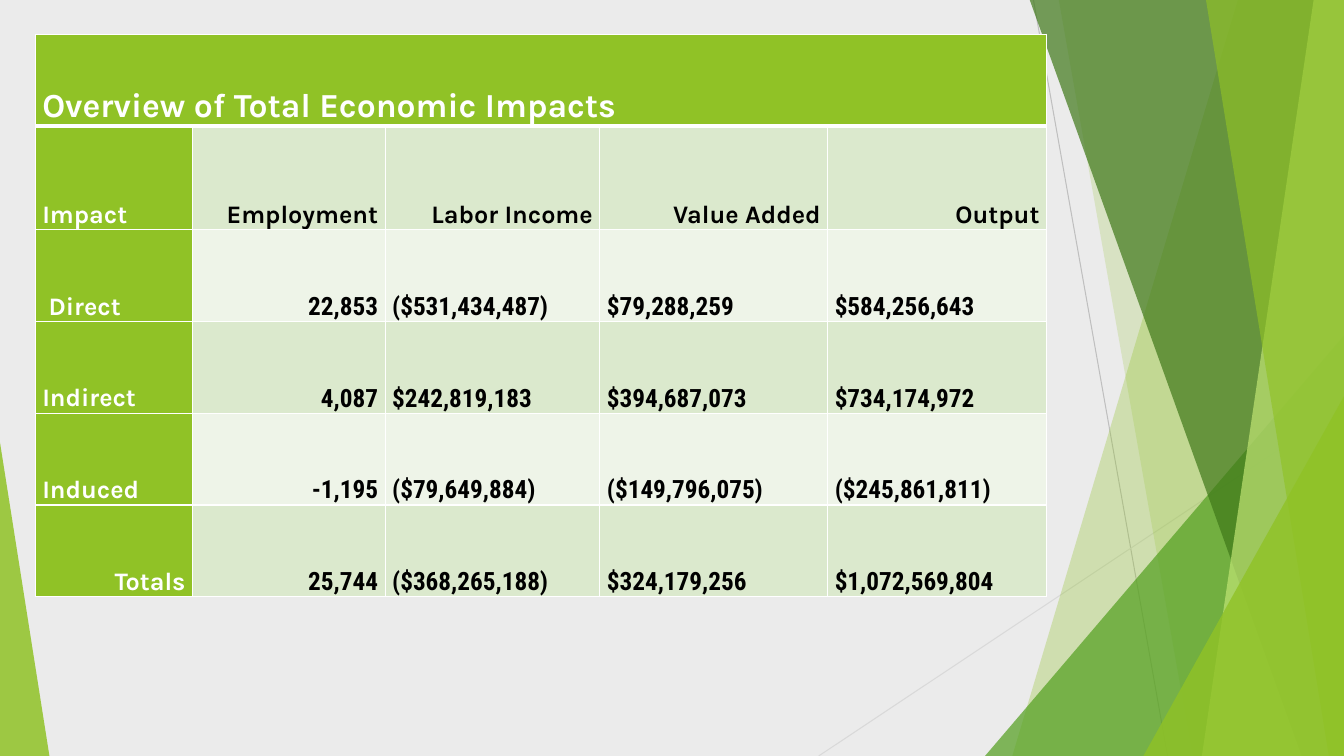
from lxml import etree
from pptx import Presentation
from pptx.dml.color import RGBColor
from pptx.enum.shapes import MSO_CONNECTOR, MSO_SHAPE
from pptx.enum.text import MSO_ANCHOR, PP_ALIGN
from pptx.oxml.ns import qn
from pptx.util import Inches, Pt

LEFT, RIGHT = PP_ALIGN.LEFT, PP_ALIGN.RIGHT
BOTTOM = MSO_ANCHOR.BOTTOM
STRAIGHT = MSO_CONNECTOR.STRAIGHT
TRIANGLE = MSO_SHAPE.ISOSCELES_TRIANGLE

COLORS = {
    "back": "EBEBEB", "lime": "90C226", "green": "54A021", "dark": "3F7819",
    "pale": "C0E474", "gray": "BFBFBF", "mist": "D9D9D9", "white": "FFFFFF",
    "black": "000000", "band": "DBE9CD", "light": "EEF4E8",
}
HEAD, BODY = "Karla", "Roboto Condensed"

TITLE = "Overview of Total Economic Impacts"
ROWS = [
    ["Impact", "Employment", "Labor Income", "Value Added", "Output"],
    [" Direct", "22,853", "($531,434,487)", "$79,288,259", "$584,256,643"],
    ["Indirect", "4,087", "$242,819,183", "$394,687,073", "$734,174,972"],
    ["Induced", "-1,195", "($79,649,884)", "($149,796,075)", "($245,861,811)"],
    ["Totals", "25,744", "($368,265,188)", "$324,179,256", "$1,072,569,804"],
]
WIDTHS = [1.56, 1.91, 2.13, 2.26, 2.17]
HEIGHTS = [0.91, 1.03, 0.91, 0.91, 0.91, 0.91]


def color(name):
    return RGBColor.from_string(COLORS[name])


def paint(shape, name, alpha):
    """Fill a shape with a color of the given opacity in percent."""
    shape.shadow.inherit = False
    shape.line.fill.background()
    shape.fill.solid()
    shape.fill.fore_color.rgb = color(name)
    tint = shape.fill._xPr.find(qn("a:solidFill"))[0]
    etree.SubElement(tint, qn("a:alpha"), val=str(alpha * 1000))


def add_ray(slide, start, end, name):
    ray = slide.shapes.add_connector(STRAIGHT, *map(Inches, start + end))
    ray.line.color.rgb = color(name)
    ray.line.width = Pt(0.75)
    etree.SubElement(ray._element.spPr, qn("a:effectLst"))


def add_blade(slide, box, top, foot, name, alpha):
    """Draw a slanted panel that reaches the right edge of the box."""
    x, y, w, h = box
    spots = [(x + top, y - 0.01), (x + w, y - 0.01), (x + w, y + h), (x + foot, y + h)]
    spots = [(Inches(a), Inches(b)) for a, b in spots]
    pen = slide.shapes.build_freeform(*spots[0])
    pen.add_line_segments(spots[1:], close=True)
    paint(pen.convert_to_shape(), name, alpha)


def add_wedge(slide, box, apex, name, alpha):
    wedge = slide.shapes.add_shape(TRIANGLE, *map(Inches, box))
    wedge.adjustments[0] = apex
    paint(wedge, name, alpha)


def add_fan(slide, box):
    """Build the layered green panels on the right side."""
    x, y, w, h = box

    def corner(width, height, name, alpha):
        spot = (x + w - width, y + h - height, width, height)
        add_wedge(slide, spot, 1, name, alpha)

    add_ray(slide, (x + 2.13, y), (x + 3.46, y + h), "gray")
    add_ray(slide, (x + w, y + 4.03), (x, y + h), "mist")
    add_blade(slide, box, 4.16, 1.92, "lime", 30)
    add_blade(slide, box, 2.38, 3.71, "lime", 20)
    corner(3.56, 4.17, "green", 72)
    add_blade(slide, box, 2.09, 4.79, "dark", 70)
    add_blade(slide, box, 4.91, 3.8, "pale", 70)
    add_blade(slide, box, 3.84, 5.06, "lime", 65)
    corner(1.99, 3.57, "lime", 80)


def add_edges(cell, sizes):
    props = cell._tc.get_or_add_tcPr()
    for side, size in sizes.items():
        edge = etree.SubElement(props, qn("a:ln" + side), w=str(Pt(size)))
        fill = etree.SubElement(edge, qn("a:solidFill"))
        etree.SubElement(fill, qn("a:srgbClr"), val=COLORS["white"])


def set_cell(cell, text, fill, ink, font, size=18, align=LEFT, top=1, base=1):
    add_edges(cell, {"L": 1, "R": 1, "T": top, "B": base})
    cell.fill.solid()
    cell.fill.fore_color.rgb = color(fill)
    frame = {"vertical_anchor": BOTTOM, "margin_left": Inches(0.07),
             "margin_right": Inches(0.07), "margin_top": 0, "margin_bottom": 0}
    for key, value in frame.items():
        setattr(cell, key, value)
    para = cell.text_frame.paragraphs[0]
    layout = {"alignment": align, "line_spacing": 1.15, "space_after": Pt(8)}
    for key, value in layout.items():
        setattr(para, key, value)
    if text:
        run = para.add_run()
        run.text = text
        for key, value in {"name": font, "size": Pt(size), "bold": True}.items():
            setattr(run.font, key, value)
        run.font.color.rgb = color(ink)


def add_grid(slide, box):
    """Build the table of impacts with its title row."""
    grid = slide.shapes.add_table(len(HEIGHTS), len(WIDTHS), *map(Inches, box)).table
    for col, width in zip(grid.columns, WIDTHS):
        col.width = Inches(width)
    for row, height in zip(grid.rows, HEIGHTS):
        row.height = Inches(height)
    for c in range(len(WIDTHS)):
        set_cell(grid.cell(0, c), "" if c else TITLE, "lime", "white", HEAD, 24, base=3)
    grid.cell(0, 0).merge(grid.cell(0, len(WIDTHS) - 1))

    for r, row in enumerate(ROWS, 1):
        for c, text in enumerate(row):
            first, label = c == 0, r == 1
            fill = "lime" if first else "band" if r % 2 else "light"
            ink = "white" if first else "black"
            font = HEAD if first or label else BODY
            right = c == 1 or (label and not first) or text == "Totals"
            set_cell(grid.cell(r, c), text, fill, ink, font,
                     align=RIGHT if right else LEFT, top=3 if label else 1)


def main():
    deck = Presentation()
    deck.slide_width, deck.slide_height = Inches(13.33), Inches(7.5)
    slide = deck.slides.add_slide(deck.slide_layouts[6])
    slide.background.fill.solid()
    slide.background.fill.fore_color.rgb = color("back")
    add_fan(slide, (8.12, 0, 5.21, 7.5))
    add_wedge(slide, (0, 4.39, 0.49, 3.11), 0, "lime", 85)
    add_grid(slide, (0.35, 0.34, 10.03, 5.58))
    deck.save("out.pptx")


if __name__ == "__main__":
    main()
